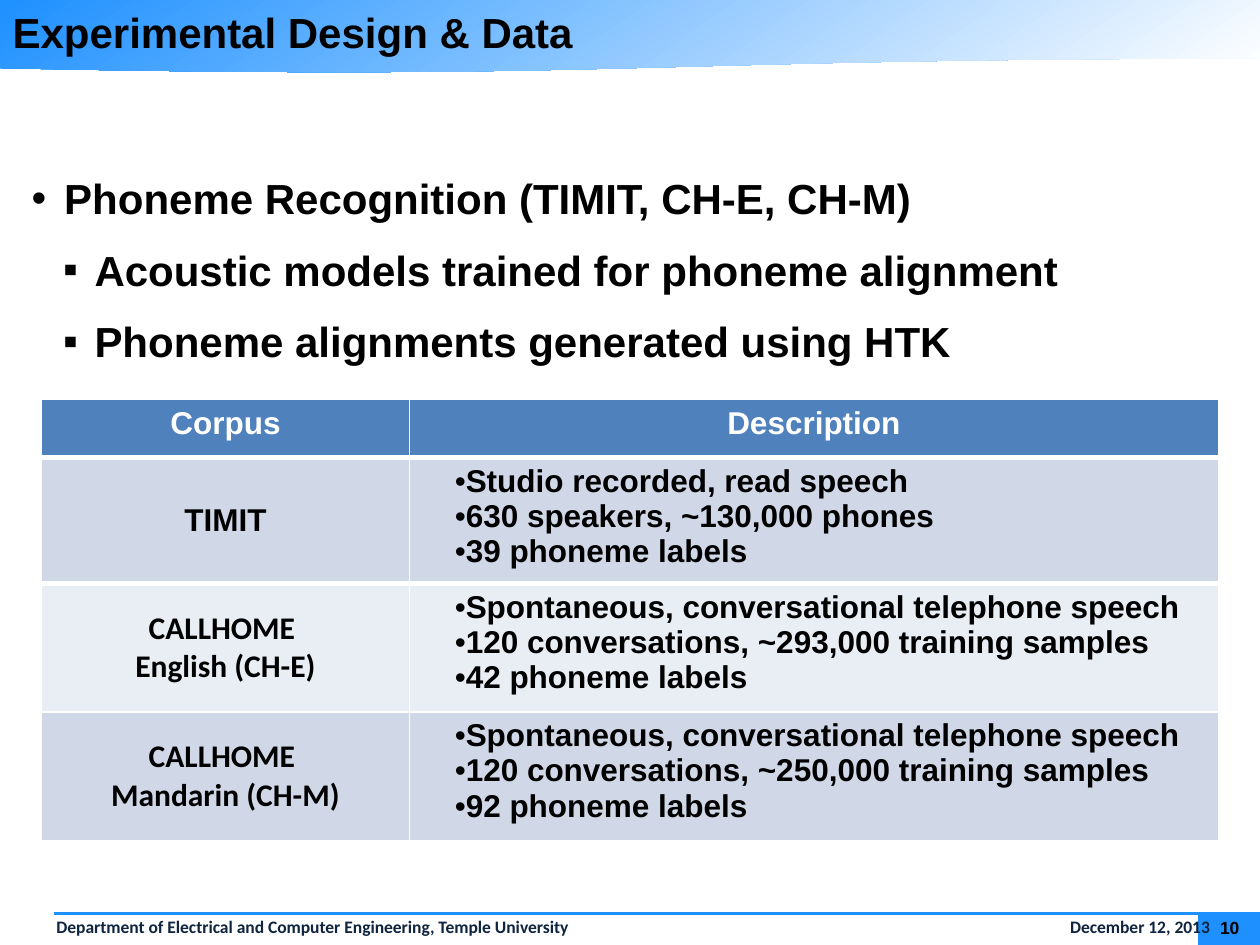
from lxml import etree
from pptx import Presentation
from pptx.dml.color import RGBColor
from pptx.enum.shapes import MSO_CONNECTOR, MSO_SHAPE
from pptx.enum.text import MSO_ANCHOR, MSO_AUTO_SIZE, PP_ALIGN
from pptx.oxml.ns import qn
from pptx.util import Inches, Pt

LEFT, CENTER, RIGHT = PP_ALIGN.LEFT, PP_ALIGN.CENTER, PP_ALIGN.RIGHT
TOP, MIDDLE = MSO_ANCHOR.TOP, MSO_ANCHOR.MIDDLE
FIT_SHAPE, NO_FIT = MSO_AUTO_SIZE.SHAPE_TO_FIT_TEXT, MSO_AUTO_SIZE.NONE
RECTANGLE, DOCUMENT = MSO_SHAPE.RECTANGLE, MSO_SHAPE.FLOWCHART_DOCUMENT
STRAIGHT = MSO_CONNECTOR.STRAIGHT
TITLE_ONLY = 5


def rgb(color):
    return RGBColor.from_string(color)


def write(frame, lines, size=18, font="Arial", color="000000", bold=True,
          align=LEFT, after=0, spacing=None, margin=0, indent=0,
          bullets=None, levels=None):
    """Fill a text frame, one paragraph a line; levels gives (level, margin, indent)."""
    for i, line in enumerate(lines):
        paragraph = frame.paragraphs[0] if i == 0 else frame.add_paragraph()
        level, left, hang = levels[i] if levels else (0, margin, indent)
        paragraph.level = level
        properties = paragraph._p.get_or_add_pPr()
        properties.set("marL", str(Inches(left)))
        properties.set("indent", str(Inches(hang)))
        if bullets:
            etree.SubElement(properties, qn("a:buFont")).set("typeface", font)
            etree.SubElement(properties, qn("a:buChar")).set("char", bullets[i])
        paragraph.alignment = align
        paragraph.space_before = Pt(0)
        paragraph.space_after = Pt(after)
        if spacing:
            paragraph.line_spacing = spacing
        run = paragraph.add_run()
        run.text = line
        run.font.size, run.font.name, run.font.bold = Pt(size), font, bold
        run.font.color.rgb = rgb(color)


def border(cell, side, color, width):
    """Draw one cell border; side is lnL, lnR, lnT or lnB."""
    line = etree.Element(qn("a:" + side), w=str(Pt(width)))
    fill = etree.SubElement(line, qn("a:solidFill"))
    etree.SubElement(fill, qn("a:srgbClr")).set("val", color)
    cell._tc.get_or_add_tcPr().insert(0, line)


class SlideBuilder:
    accent = "1E90FF"
    header_fill = "4F81BD"
    row_fills = ("D0D8E8", "E9EDF4")

    def __init__(self, slide):
        self.slide = slide
        self.shapes = slide.shapes

    def block(self, kind, left, top, width, height, gradient_to=None, angle=0):
        shape = self.shapes.add_shape(
            kind, Inches(left), Inches(top), Inches(width), Inches(height))
        shape.shadow.inherit = False
        shape.line.fill.background()
        if gradient_to:
            shape.fill.gradient()
            shape.fill.gradient_angle = angle
            for stop, color in zip(shape.fill.gradient_stops, (self.accent, gradient_to)):
                stop.color.rgb = rgb(color)
        else:
            shape.fill.solid()
            shape.fill.fore_color.rgb = rgb(self.accent)

    def rule(self, x1, y1, x2, y2, width=1.5):
        line = self.shapes.add_connector(
            STRAIGHT, Inches(x1), Inches(y1), Inches(x2), Inches(y2))
        line.line.color.rgb = rgb(self.accent)
        line.line.width = Pt(width)
        etree.SubElement(line._element.spPr, qn("a:effectLst"))

    def text(self, lines, left, top, width, height, inset=True, anchor=TOP, **style):
        box = self.shapes.add_textbox(
            Inches(left), Inches(top), Inches(width), Inches(height))
        frame = box.text_frame
        frame.word_wrap = True
        frame.auto_size = FIT_SHAPE
        frame.vertical_anchor = anchor
        if not inset:
            frame.margin_left = frame.margin_right = 0
            frame.margin_top = frame.margin_bottom = 0
        write(frame, lines, **style)

    def title(self, text, left, top, width, height, **style):
        title = self.shapes.title
        title.left, title.top = Inches(left), Inches(top)
        title.width, title.height = Inches(width), Inches(height)
        title.text_frame.auto_size = NO_FIT
        title.text_frame.vertical_anchor = TOP
        write(title.text_frame, [text], **style)
        # The title lies above the banner
        title.element.getparent().append(title.element)

    def table(self, header, rows, left, top, widths, heights):
        """Each row is (corpus lines, corpus font, description bullets)."""
        frame = self.shapes.add_table(
            len(rows) + 1, len(header), Inches(left), Inches(top),
            Inches(sum(widths)), Inches(sum(heights)))
        table = frame.table
        for column, width in zip(table.columns, widths):
            column.width = Inches(width)
        for row, height in zip(table.rows, heights):
            row.height = Inches(height)
        for c, label in enumerate(header):
            self.cell(table.cell(0, c), [label], self.header_fill,
                      color="FFFFFF", align=CENTER)
            border(table.cell(0, c), "lnB", "FFFFFF", 3)
        for r, (corpus, font, description) in enumerate(rows):
            fill = self.row_fills[r % 2]
            self.cell(table.cell(r + 1, 0), corpus, fill, anchor=MIDDLE,
                      font=font, align=CENTER)
            self.cell(table.cell(r + 1, 1), description, fill,
                      indent=0.26, bullets="•" * len(description))
        for c in range(len(header)):
            border(table.cell(1, c), "lnT", "FFFFFF", 3)

    def cell(self, cell, lines, fill, anchor=TOP, **style):
        cell.fill.solid()
        cell.fill.fore_color.rgb = rgb(fill)
        cell.vertical_anchor = anchor
        write(cell.text_frame, lines, **style)


def main():
    deck = Presentation()
    deck.slide_width, deck.slide_height = Inches(10), Inches(7.5)
    page = SlideBuilder(deck.slides.add_slide(deck.slide_layouts[TITLE_ONLY]))

    page.block(DOCUMENT, 0, 0, 10.01, 0.58, gradient_to="FFFFFF", angle=305)
    page.block(RECTANGLE, 9.51, 7.24, 0.5, 0.26)
    footer = {"size": 10, "font": "Calibri", "color": "0F243E", "spacing": 0.95}
    page.text(["Department of Electrical and Computer Engineering, Temple University"],
              0.04, 7.23, 6, 0.26, margin=0.31, **footer)
    page.text(["December 12, 2013"], 7.7, 7.23, 2, 0.26, align=RIGHT, **footer)
    page.rule(0.43, 7.25, 10, 7.25)
    page.text(["10"], 9.56, 7.28, 0.4, 0.17, inset=False, anchor=MIDDLE,
              size=10, align=CENTER)

    page.text(["Phoneme Recognition (TIMIT, CH-E, CH-M)",
               "Acoustic models trained for phoneme alignment",
               "Phoneme alignments generated using HTK"],
              0.25, 1.37, 9.52, 1.55, inset=False, size=24, after=12, bullets="•▪▪",
              levels=[(0, 0.26, -0.26), (1, 0.5, -0.25), (1, 0.5, -0.25)])
    page.title("Experimental Design & Data", 0, 0, 10, 0.43, size=24)

    page.table(
        ["Corpus", "Description"],
        [(["TIMIT"], "Arial",
          ["Studio recorded, read speech",
           "630 speakers, ~130,000 phones",
           "39 phoneme labels"]),
         (["CALLHOME ", "English (CH-E)"], "Calibri",
          ["Spontaneous, conversational telephone speech",
           "120 conversations, ~293,000 training samples",
           "42 phoneme labels"]),
         (["CALLHOME ", "Mandarin (CH-M)"], "Calibri",
          ["Spontaneous, conversational telephone speech",
           "120 conversations, ~250,000 training samples",
           "92 phoneme labels"])],
        left=0.33, top=3.17, widths=(2.92, 6.42), heights=(0.46, 1, 1.02, 1.02))
    deck.save("out.pptx")


if __name__ == "__main__":
    main()
